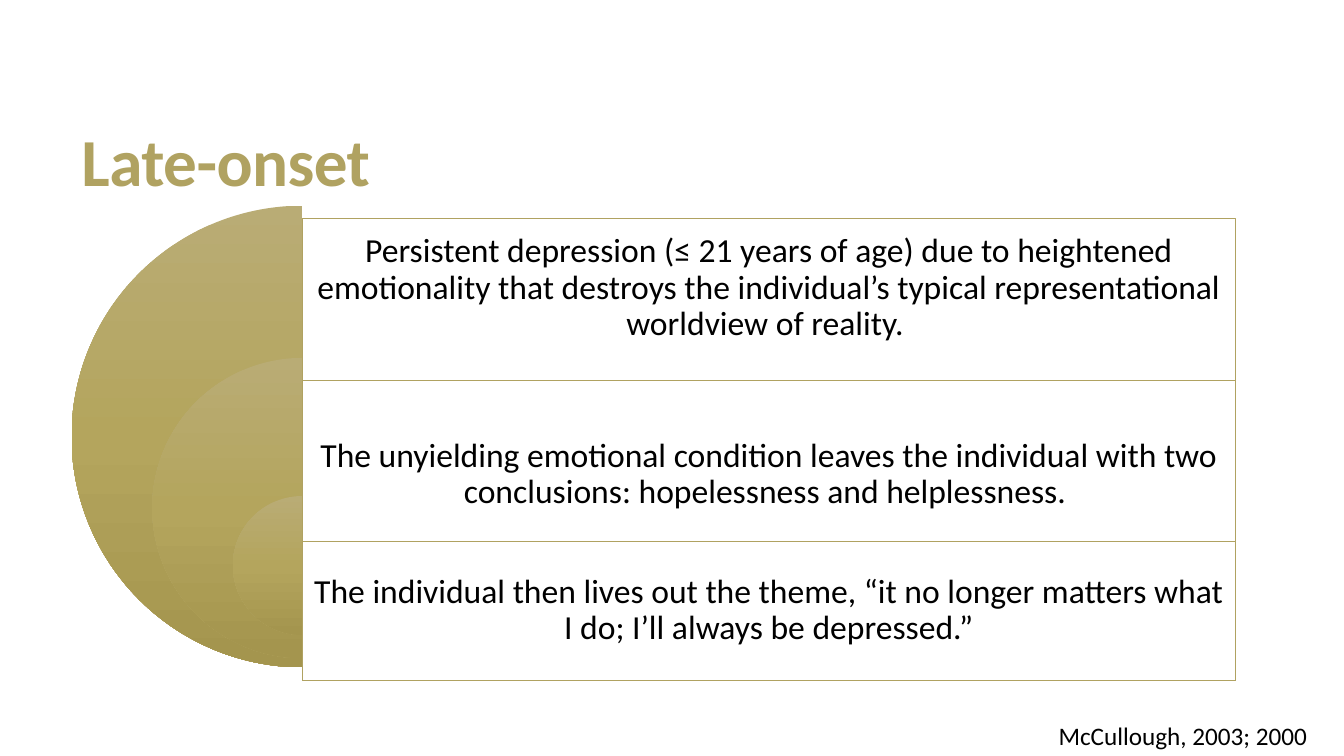
from copy import deepcopy
from dataclasses import dataclass

from lxml import etree
from pptx import Presentation
from pptx.dml.color import RGBColor
from pptx.enum.shapes import MSO_SHAPE
from pptx.enum.text import MSO_ANCHOR, PP_ALIGN
from pptx.oxml.ns import qn
from pptx.util import Emu, Pt

PIE, RECT = MSO_SHAPE.PIE, MSO_SHAPE.RECTANGLE
TOP, MIDDLE, BOTTOM = MSO_ANCHOR.TOP, MSO_ANCHOR.MIDDLE, MSO_ANCHOR.BOTTOM
LEFT, CENTER = PP_ALIGN.LEFT, PP_ALIGN.CENTER

EMU_PER_PX = 9144  # 100 px to the inch
GOLD, BLACK, WHITE = "B0A261", "000000", "FFFFFF"
PIE_STOPS = ((0, "B9AC75"), (0.5, "B4A55D"), (1, "A4954E"))

AXIS_X = 300  # flat side of the pies and left edge of the boxes
BOX_WIDTH = 925
BOX_BOTTOM = 675
BAND_HEIGHT = 138
BAND_STEP = 160


@dataclass
class Band:
    pie_top: int
    text: str
    margin_top: int = 10
    margin_bottom: int = 10


BANDS = [
    Band(204, "Persistent depression (≤ 21 years of age) due to heightened emotionality "
              "that destroys the individual’s typical representational worldview of reality. "),
    Band(355, "The unyielding emotional condition leaves the individual with two "
              "conclusions: hopelessness and helplessness. ", 55, 5),
    Band(492, "The individual then lives out the theme, “it no longer matters what I do; "
              "I’ll always be depressed.”"),
]


def px(n: int) -> Emu:
    return Emu(n * EMU_PER_PX)


def rgb(color: str) -> RGBColor:
    return RGBColor.from_string(color)


def add_text(slide, box: tuple, text: str, size: int, color: str = BLACK, bold: bool = False,
             anchor=TOP, align=LEFT, line_spacing: float = 1.0, margins: tuple = (5, 5)):
    """Add a one-paragraph text box; margins are top and bottom."""
    tf = slide.shapes.add_textbox(*map(px, box)).text_frame
    frame_format = {"word_wrap": True, "vertical_anchor": anchor,
                    "margin_left": px(10), "margin_right": px(10),
                    "margin_top": px(margins[0]), "margin_bottom": px(margins[1])}
    for name, value in frame_format.items():
        setattr(tf, name, value)
    p = tf.paragraphs[0]
    p.alignment, p.line_spacing = align, line_spacing
    r = p.add_run()
    r.text = text
    for name, value in {"name": "Calibri", "size": Pt(size), "bold": bold}.items():
        setattr(r.font, name, value)
    r.font.color.rgb = rgb(color)
    return r


def add_half_pie(slide, top: int, size: int) -> None:
    s = slide.shapes.add_shape(PIE, *map(px, (AXIS_X - size // 2, top, size, size)))
    s.shadow.inherit = False
    s.adjustments[0], s.adjustments[1] = 54, 162  # 90° to 270°
    s.line.fill.background()
    s.fill.gradient()
    s.fill.gradient_angle = 270
    stop_list = s._element.spPr.find(".//" + qn("a:gsLst"))
    stop_list.append(deepcopy(stop_list[0]))
    for stop, (position, color) in zip(s.fill.gradient_stops, PIE_STOPS):
        stop.position = position
        stop.color.rgb = rgb(color)


def add_box(slide, top: int, height: int) -> None:
    s = slide.shapes.add_shape(RECT, *map(px, (AXIS_X, top, BOX_WIDTH, height)))
    s.shadow.inherit = False
    s.fill.solid()
    s.fill.fore_color.rgb = rgb(WHITE)
    white = s._element.spPr.find(qn("a:solidFill"))[0]
    etree.SubElement(white, qn("a:alpha"), val="90000")
    s.line.color.rgb = rgb(GOLD)
    s.line.width = Pt(0.5)


def main() -> None:
    prs = Presentation()
    prs.slide_width, prs.slide_height = px(1333), px(750)
    slide = prs.slides.add_slide(prs.slide_layouts[6])

    title = add_text(slide, (71, 40, 1154, 164), "Late-onset", 48, GOLD, True,
                     anchor=BOTTOM, line_spacing=0.9)
    title.font._element.set("spc", "-40")

    for i, band in enumerate(BANDS):
        size = BAND_HEIGHT + BAND_STEP * (len(BANDS) - 1 - i)
        top = BOX_BOTTOM - size
        add_half_pie(slide, band.pie_top, size)
        add_box(slide, top, size)
        add_text(slide, (AXIS_X, top, BOX_WIDTH, BAND_HEIGHT), band.text, 24,
                 anchor=MIDDLE, align=CENTER, line_spacing=0.9,
                 margins=(band.margin_top, band.margin_bottom))

    add_text(slide, (1040, 710, 338, 40), "McCullough, 2003; 2000", 18)
    prs.save("out.pptx")


if __name__ == "__main__":
    main()
